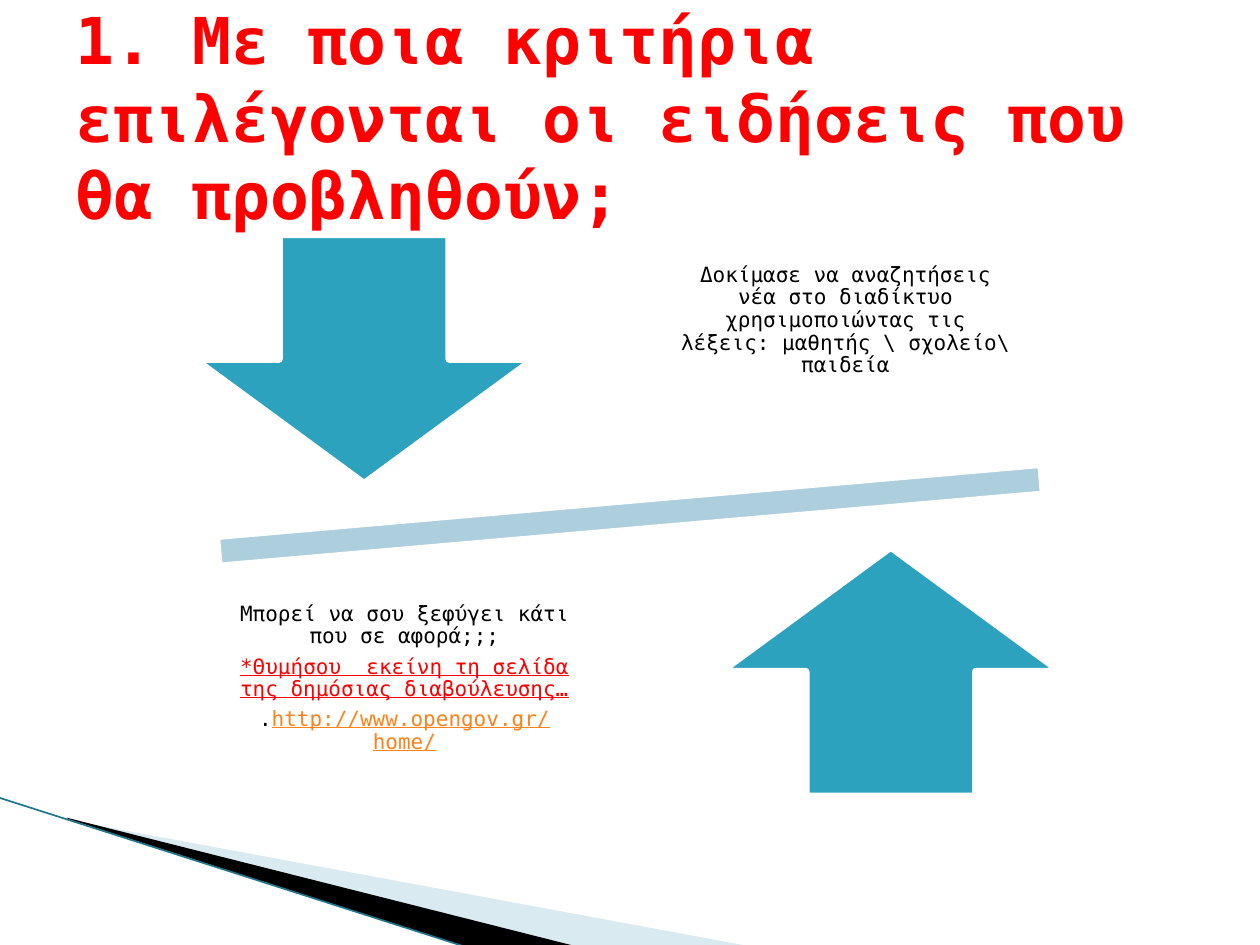
from dataclasses import dataclass

from lxml.etree import SubElement
from pptx import Presentation
from pptx.dml.color import RGBColor
from pptx.enum.shapes import MSO_CONNECTOR, MSO_SHAPE as SHAPE
from pptx.enum.text import MSO_ANCHOR, MSO_AUTO_SIZE, PP_ALIGN
from pptx.oxml.ns import qn
from pptx.slide import Slide
from pptx.util import Inches, Pt

BLACK = RGBColor(0x00, 0x00, 0x00)
WHITE = RGBColor(0xFF, 0xFF, 0xFF)
RED = RGBColor(0xFF, 0x00, 0x00)
ORANGE = RGBColor(0xFF, 0x81, 0x19)
TEAL = RGBColor(0x2D, 0xA2, 0xBF)
DARK_TEAL = RGBColor(0x1E, 0x76, 0x8C)
PALE_TEAL = RGBColor(0xAD, 0xCE, 0xDC)
WEDGE_BLUE = RGBColor(0xA0, 0xCB, 0xDC)

ARROW_SIZE = (2.7, 1.98)
NOTE_SIZE = (2.88, 2.08)


def set_all(target, values):
    for name, value in values.items():
        setattr(target, name, value)


@dataclass
class SlideWriter:
    slide: Slide
    font_name: str = "DejaVu Sans Mono"
    title_size: float = 36.9
    note_size: float = 12
    outline: float = 4.33

    def title(self, text, left, top, width, height):
        heading = self.slide.shapes.title
        set_all(heading, dict(left=Inches(left), top=Inches(top),
                              width=Inches(width), height=Inches(height)))
        frame = heading.text_frame
        frame.text = text
        set_all(frame, dict(auto_size=MSO_AUTO_SIZE.NONE, word_wrap=True,
                            vertical_anchor=MSO_ANCHOR.MIDDLE))
        paragraph = frame.paragraphs[0]
        paragraph.alignment = PP_ALIGN.LEFT
        run = paragraph.runs[0]
        set_all(run.font, dict(name=self.font_name, size=Pt(self.title_size), bold=True))
        run.font.color.rgb = RED

    def wedge(self, points, color, opacity=100):
        start, *rest = [(Inches(x), Inches(y)) for x, y in points]
        builder = self.slide.shapes.build_freeform(*start)
        builder.add_line_segments(rest)
        wedge = builder.convert_to_shape()
        wedge.shadow.inherit = False
        wedge.fill.solid()
        wedge.fill.fore_color.rgb = color
        wedge.line.fill.background()
        if opacity < 100:
            rgb = wedge.fill._xPr.find(qn("a:solidFill"))[0]
            SubElement(rgb, qn("a:alpha"), val=str(opacity * 1000))

    def line(self, start, end, color, width):
        line = self.slide.shapes.add_connector(
            MSO_CONNECTOR.STRAIGHT, *map(Inches, start + end))
        line.line.color.rgb = color
        line.line.width = Pt(width)
        SubElement(line._element.spPr, qn("a:effectLst"))

    def shape(self, kind, left, top, size, color, rotation=0):
        shape = self.slide.shapes.add_shape(kind, *map(Inches, (left, top, *size)))
        shape.rotation = rotation
        shape.shadow.inherit = False
        shape.fill.solid()
        shape.fill.fore_color.rgb = color
        shape.line.color.rgb = WHITE
        shape.line.width = Pt(self.outline)

    def note(self, left, top, paragraphs):
        """Centred text; each paragraph is a list of (text, color, underline)."""
        box = self.slide.shapes.add_textbox(*map(Inches, (left, top, *NOTE_SIZE)))
        frame = box.text_frame
        set_all(frame, dict(word_wrap=True, vertical_anchor=MSO_ANCHOR.MIDDLE,
                            margin_left=Inches(0.09), margin_right=Inches(0.09),
                            margin_top=Inches(0.09), margin_bottom=Inches(0.32)))
        for index, parts in enumerate(paragraphs):
            paragraph = frame.add_paragraph() if index else frame.paragraphs[0]
            set_all(paragraph, dict(alignment=PP_ALIGN.CENTER, line_spacing=0.9,
                                    space_after=Pt(0.35 * self.note_size)))
            for text, color, underline in parts:
                run = paragraph.add_run()
                run.text = text
                set_all(run.font, dict(name=self.font_name, size=Pt(self.note_size),
                                       underline=underline))
                run.font.color.rgb = color


def main():
    deck = Presentation()
    deck.slide_width, deck.slide_height = Inches(10), Inches(7.5)
    title_only = deck.slide_layouts[5]
    writer = SlideWriter(deck.slides.add_slide(title_only))

    writer.wedge([(0.55, 6.51), (5.95, 7.51), (4.56, 7.51), (0.55, 6.5)], WEDGE_BLUE, 40)
    writer.wedge([(0.53, 6.49), (4.57, 7.51), (3.72, 7.52), (0.54, 6.5)], BLACK)
    writer.line((-0.01, 6.33), (3.71, 7.52), DARK_TEAL, 0.95)

    writer.title("1. Με ποια κριτήρια επιλέγονται οι ειδήσεις που θα προβληθούν;",
                 0.5, 0.3, 9, 1.25)

    writer.shape(SHAPE.MATH_MINUS, 0.53, 3.58, (8.94, 1.02), PALE_TEAL, rotation=-5)
    writer.shape(SHAPE.DOWN_ARROW, 1.54, 1.86, ARROW_SIZE, TEAL)
    writer.shape(SHAPE.UP_ARROW, 5.72, 4.34, ARROW_SIZE, TEAL)

    writer.note(5.27, 1.62, [
        [("Δοκίμασε να αναζητήσεις νέα στο διαδίκτυο χρησιμοποιώντας τις "
          "λέξεις: μαθητής \\ σχολείο\\ παιδεία", BLACK, False)],
    ])
    writer.note(1.77, 4.46, [
        [("Μπορεί να σου ξεφύγει κάτι που σε αφορά;;;", BLACK, False)],
        [("*Θυμήσου  εκείνη τη σελίδα της δημόσιας διαβούλευσης…", RED, True)],
        [(".", BLACK, False), ("http://www.opengov.gr/home/", ORANGE, True)],
    ])

    deck.save("out.pptx")


if __name__ == "__main__":
    main()
